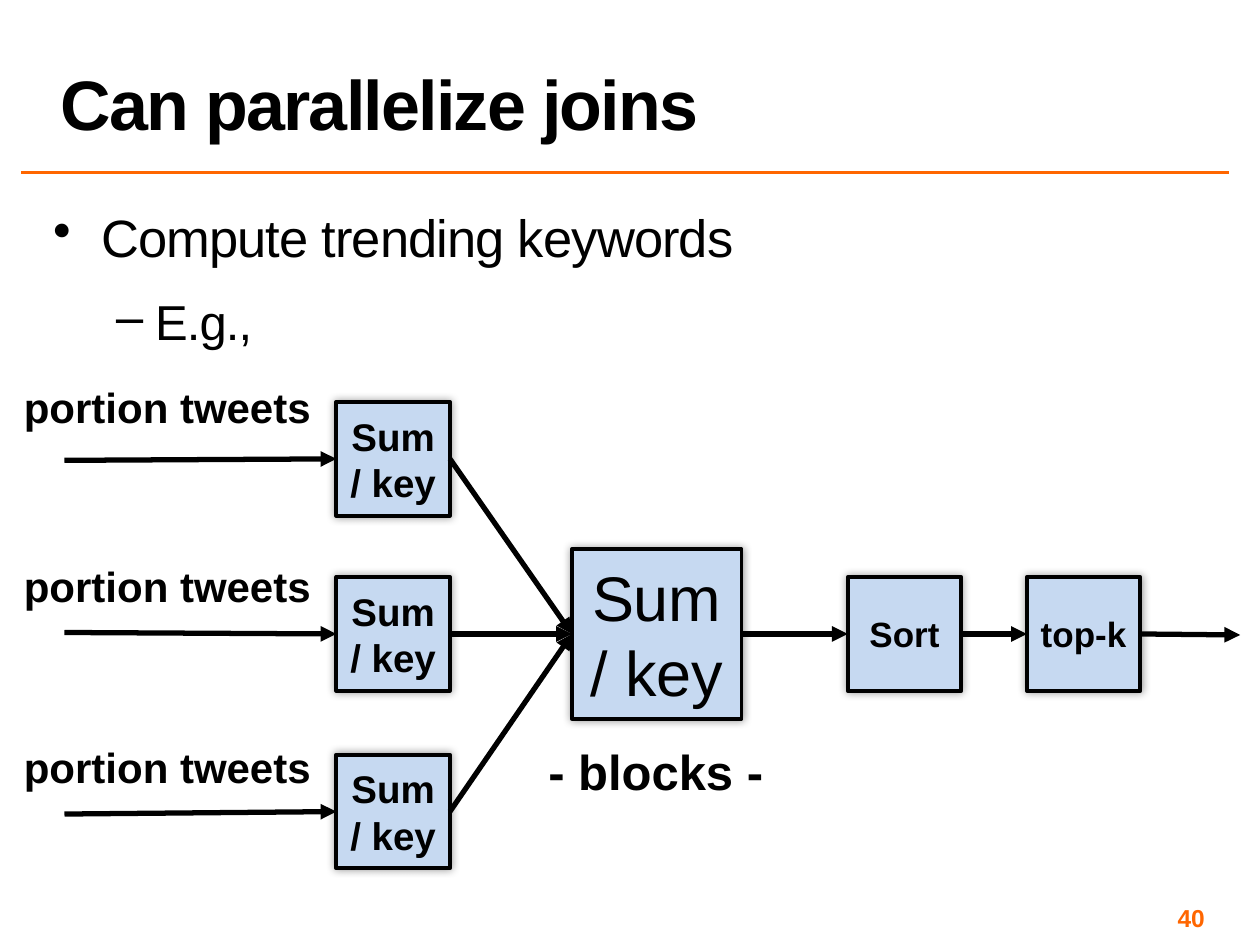
from lxml.etree import SubElement
from pptx import Presentation
from pptx.dml.color import RGBColor
from pptx.enum.shapes import MSO_CONNECTOR, MSO_SHAPE
from pptx.enum.text import MSO_ANCHOR, PP_ALIGN
from pptx.oxml.ns import qn
from pptx.util import Cm, Pt

COLORS = {"black": "000000", "accent": "FF6600", "block": "C6D9F1"}
FONT = "Arial"
TOP, LEFT, BOTTOM, RIGHT = range(4)
MIDDLE = 12.78
SMALL, LARGE = 2.29, 3.42


def color(name):
    """Return the named palette colour."""
    return RGBColor.from_string(COLORS[name])


def write(frame, lines, size, bold=False, align=PP_ALIGN.CENTER, ink="black"):
    """Fill a text frame with one formatted paragraph per line."""
    frame.text = "\n".join(lines)
    for para in frame.paragraphs:
        para.alignment = align
        para.font.name = FONT
        para.font.size = Pt(size)
        para.font.bold = bold
        para.font.color.rgb = color(ink)


def tighten(para, points):
    """Set the character spacing of every run in a paragraph."""
    for span in para.runs:
        span._r.get_or_add_rPr().set("spc", str(int(points * 100)))


def add_title(slide, text):
    """Place and format the title placeholder."""
    title = slide.shapes.title
    title.left, title.top, title.width, title.height = Cm(0.97), Cm(0.05), Cm(23.8), Cm(2.97)
    frame = title.text_frame
    write(frame, [text], 40, bold=True, align=PP_ALIGN.LEFT)
    frame.vertical_anchor = MSO_ANCHOR.BOTTOM
    frame.paragraphs[0].line_spacing = 0.8
    tighten(frame.paragraphs[0], -1)


def add_text(slide, left, top, width, height, text, size, **style):
    """Add a bold one-line text box."""
    box = slide.shapes.add_textbox(Cm(left), Cm(top), Cm(width), Cm(height))
    write(box.text_frame, [text], size, bold=True, **style)
    return box


def set_margins(frame, margin):
    """Give a text frame the same margin on all sides."""
    frame.margin_left = frame.margin_right = Cm(margin)
    frame.margin_top = frame.margin_bottom = Cm(margin)


def add_bullets(slide, items):
    """Add the bulleted body from (text, size, mark, indent, hanging, spacing)."""
    box = slide.shapes.add_textbox(Cm(0.97), Cm(4.04), Cm(23.8), Cm(4.19))
    frame = box.text_frame
    frame.word_wrap = True
    set_margins(frame, 0.1)
    write(frame, [item[0] for item in items], 30, align=PP_ALIGN.LEFT)
    for level, (para, item) in enumerate(zip(frame.paragraphs, items)):
        _, size, mark, indent, hanging, spacing = item
        para.level = level
        para.font.size = Pt(size)
        para.space_before = para.space_after = Pt(8)
        para.line_spacing = spacing
        tighten(para, -0.5)
        properties = para._p.get_or_add_pPr()
        properties.set("marL", str(Cm(indent)))
        properties.set("indent", str(-Cm(hanging)))
        bullet = properties.makeelement(qn("a:buChar"), {"char": mark})
        properties.insert_element_before(bullet, "a:tabLst", "a:defRPr", "a:extLst")


def add_block(slide, left, middle, side, lines, size, bold=True):
    """Add a square block with a soft shadow, centred on a height."""
    block = slide.shapes.add_shape(
        MSO_SHAPE.RECTANGLE, Cm(left), Cm(middle - side / 2), Cm(side), Cm(side))
    block.fill.solid()
    block.fill.fore_color.rgb = color("block")
    block.line.color.rgb = color("black")
    block.line.width = Pt(2.25)
    block.shadow.inherit = False
    effects = block._element.spPr.find(qn("a:effectLst"))
    shadow = SubElement(effects, qn("a:outerShdw"), blurRad=str(Pt(5)), rotWithShape="0")
    tint = SubElement(shadow, qn("a:srgbClr"), val=COLORS["black"])
    SubElement(tint, qn("a:alpha"), val="40000")
    frame = block.text_frame
    frame.word_wrap = False
    frame.vertical_anchor = MSO_ANCHOR.MIDDLE
    write(frame, lines, size, bold)
    return block


def add_line(slide, start, end, ink="black", width=3):
    """Add a straight line between two points in centimetres."""
    line = slide.shapes.add_connector(
        MSO_CONNECTOR.STRAIGHT, *(Cm(value) for value in (*start, *end)))
    line.line.color.rgb = color(ink)
    line.line.width = Pt(width)
    SubElement(line._element.spPr, qn("a:effectLst"))
    return line


def add_arrow(slide, source, target):
    """Add an arrow whose ends are points or blocks."""
    start = source if isinstance(source, tuple) else (0, 0)
    end = target if isinstance(target, tuple) else (0, 0)
    arrow = add_line(slide, start, end)
    if not isinstance(source, tuple):
        arrow.begin_connect(source, RIGHT)
    if not isinstance(target, tuple):
        arrow.end_connect(target, LEFT)
    SubElement(arrow.line._get_or_add_ln(), qn("a:tailEnd"), type="triangle")


def add_flow(slide):
    """Draw the parallel sums that merge and run on to top-k."""
    total = add_block(slide, 11.53, MIDDLE, LARGE, ["Sum", "/ key"], 36, bold=False)
    sort = add_block(slide, 17.09, MIDDLE, SMALL, ["Sort"], 20)
    top = add_block(slide, 20.7, MIDDLE, SMALL, ["top-k"], 20)
    for middle, start, label_top in ((9.25, 9.28, 7.57), (MIDDLE, 12.75, 11.18), (16.36, 16.41, 14.83)):
        part = add_block(slide, 6.78, middle, SMALL, ["Sum", "/ key"], 22)
        add_arrow(slide, (1.3, start), part)
        add_arrow(slide, part, total)
        label = add_text(slide, 0.2, label_top, 6.35, 1.27, "portion tweets", 24)
        label.text_frame.word_wrap = False
    for source, target in ((total, sort), (sort, top), (top, (25, 12.8))):
        add_arrow(slide, source, target)
    caption = add_text(slide, 10.77, 14.83, 4.9, 1.45, "- blocks -", 28)
    caption.text_frame.word_wrap = False


def main():
    """Build and save the slide."""
    deck = Presentation()
    deck.slide_width, deck.slide_height = Cm(25.4), Cm(19.05)
    slide = deck.slides.add_slide(deck.slide_layouts[5])
    add_line(slide, (0.43, 3.48), (24.77, 3.48), "accent", 2)
    add_title(slide, "Can parallelize joins")
    add_bullets(slide, [
        ("Compute trending keywords", 30, "•", 0.97, 0.97, 1.0),
        ("E.g.,", 28, "–", 2.06, 0.79, 0.95),
    ])
    add_flow(slide)
    number = add_text(slide, 18.47, 18.21, 5.92, 0.58, "40", 14, align=PP_ALIGN.RIGHT, ink="accent")
    number.text_frame.vertical_anchor = MSO_ANCHOR.MIDDLE
    set_margins(number.text_frame, 0.1)
    number.text_frame.word_wrap = True
    deck.save("out.pptx")


if __name__ == "__main__":
    main()
